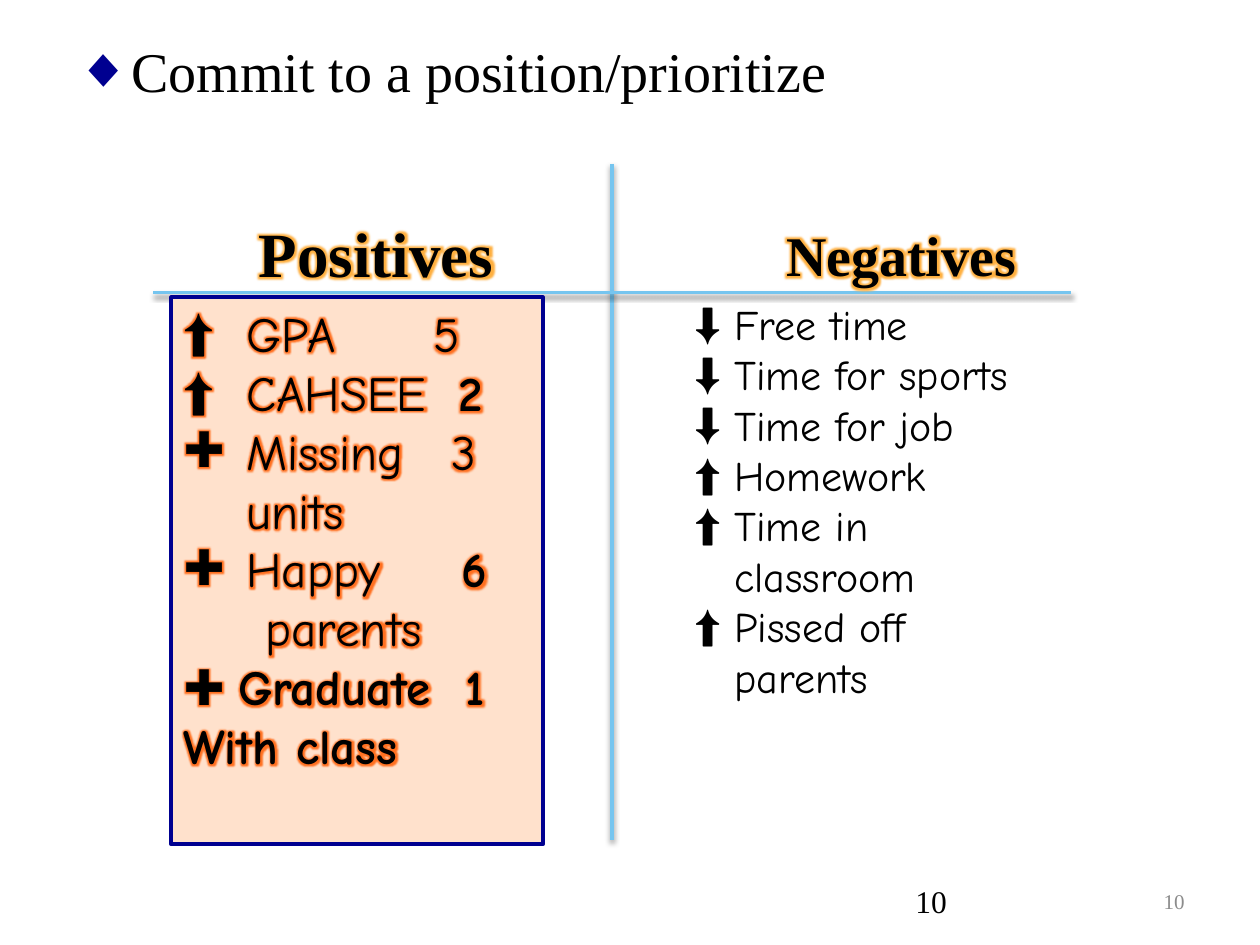
"""Build a slide that weighs ranked positives against negatives."""
from pptx import Presentation
from pptx import util as u
from pptx.dml.color import RGBColor
from pptx.enum import shapes, text
from pptx.oxml import ns, parse_xml

BLACK = RGBColor(0x00, 0x00, 0x00)
GREY = RGBColor(0x8C, 0x8C, 0x8C)
NAVY = RGBColor(0x00, 0x00, 0x90)
SKY = RGBColor(0x76, 0xC5, 0xEF)
PEACH = RGBColor(0xFF, 0xE1, 0xCC)
AMBER = RGBColor(0xFF, 0xB0, 0x40)
ORANGE = RGBColor(0xFF, 0x70, 0x20)
SERIF, COMIC = "Times New Roman", "Comic Neue"
A = ns.nsdecls("a")


def add_box(s, left, top, width, height):
    sp = s.shapes.add_textbox(u.Pt(left), u.Pt(top), u.Pt(width), u.Pt(height))
    sp.text_frame.word_wrap = True
    return sp.text_frame


def add_para(tf, runs, bullet=None, bullet_color=BLACK, left=0, hang=0, before=0, glow=None):
    p = tf.paragraphs[0] if not tf.paragraphs[0].runs else tf.add_paragraph()
    p.space_before = u.Pt(before)
    pPr = p._p.get_or_add_pPr()
    pPr.set("marL", str(u.Pt(left)))
    pPr.set("indent", str(u.Pt(-hang)))
    if bullet:
        pPr.append(parse_xml(f'<a:buClr {A}><a:srgbClr val="{bullet_color}"/></a:buClr>'))
        pPr.append(parse_xml(f'<a:buFont {A} typeface="Arial"/>'))
        pPr.append(parse_xml(f'<a:buChar {A} char="{bullet}"/>'))
    for words, fmt in runs:
        for i, line in enumerate(words.split("\v")):
            if i:
                p.add_line_break()
            r = p.add_run()
            r.text = line
            r.font.color.rgb = BLACK
            for name, value in fmt.items():
                setattr(r.font, name, value)
            if glow:
                fill = r._r.rPr.find(ns.qn("a:solidFill"))
                fill.addnext(parse_xml(
                    f'<a:effectLst {A}><a:glow rad="{u.Pt(6)}">'
                    f'<a:srgbClr val="{glow}"/></a:glow></a:effectLst>'))
    return p


prs = Presentation()
prs.slide_width, prs.slide_height = u.Pt(720), u.Pt(540)
s = prs.slides.add_slide(prs.slide_layouts[6])

title = {"name": SERIF, "size": u.Pt(32)}
tf = add_box(s, 36, 17.3, 648, 50)
add_para(tf, [("Commit to a position/prioritize", title)], "◆", NAVY, 27, 27, 6.4)

tf = add_box(s, 516, 500.5, 168, 28.8)
add_para(tf, [("10", {"name": SERIF, "size": u.Pt(18)})])
tf = add_box(s, 516, 500.5, 168, 28.8)
tf.vertical_anchor = text.MSO_ANCHOR.MIDDLE
p = add_para(tf, [("10", {"name": SERIF, "size": u.Pt(12)})])
p.runs[0].font.color.rgb = GREY
p.alignment = text.PP_ALIGN.RIGHT

for ends in [(349.7, 93.6, 349.7, 480), (87.6, 167.2, 612, 167.2)]:
    axis = s.shapes.add_connector(shapes.MSO_CONNECTOR.STRAIGHT, *map(u.Pt, ends))
    axis.line.color.rgb = SKY
    axis.line.width = u.Pt(2)
    axis._element.spPr.append(parse_xml(
        f'<a:effectLst {A}><a:outerShdw blurRad="{u.Pt(3.1)}" dist="{u.Pt(1.6)}" dir="5400000">'
        '<a:srgbClr val="000000"><a:alpha val="38000"/></a:srgbClr></a:outerShdw></a:effectLst>'))

head_width = 180
for word, size, center, top in [("Positives", 36, 215, 118.8), ("Negatives", 32, 515, 122.4)]:
    tf = add_box(s, center - head_width / 2, top, head_width, 47)
    p = add_para(tf, [(word, {"name": SERIF, "size": u.Pt(size), "bold": True})], glow=AMBER)
    p.alignment = text.PP_ALIGN.CENTER

sp = s.shapes.add_shape(shapes.MSO_SHAPE.RECTANGLE, u.Pt(97.8), u.Pt(170), u.Pt(212.4), u.Pt(312.5))
sp.shadow.inherit = False
sp.fill.solid()
sp.fill.fore_color.rgb = PEACH
sp.line.color.rgb = NAVY
sp.line.width = u.Pt(2.25)
tf = sp.text_frame
tf.word_wrap = True
tf.vertical_anchor = text.MSO_ANCHOR.TOP
plain = {"name": COMIC, "size": u.Pt(28)}
bold = {**plain, "bold": True}
positives = [
    ([("GPA", plain)], "⬆", 36, 36),
    ([("CAHSEE", plain)], "⬆", 36, 36),
    ([("Missing\vunits", plain)], "✚", 36, 36),
    ([("Happy", plain)], "✚", 36, 36),
    ([("parents", plain)], None, 47, 0),
    ([("✚ ", {**plain, "name": "Arial"}), ("Graduate", bold)], None, 0, 0),
    ([("With class", bold)], None, 0, 0),
]
for runs, bullet, left, hang in positives:
    p = add_para(tf, runs, bullet, left=left, hang=hang, glow=ORANGE)
    p.alignment = text.PP_ALIGN.LEFT

row = 33.5
tf = add_box(s, 240, 170, 64, 240)
tf.margin_left = tf.margin_right = 0
scores = [("5", plain, 8, 0), ("2", bold, 22, 0), ("3", plain, 18, 0),
          ("6", bold, 24, row), ("1", bold, 26, row)]
for score, fmt, left, before in scores:
    add_para(tf, [(score, fmt)], left=left, before=before, glow=ORANGE)

tf = add_box(s, 390, 167, 202.3, 305)
negatives = [("⬇", "Free time"), ("⬇", "Time for sports"), ("⬇", "Time for job"),
             ("⬆", "Homework"), ("⬆", "Time in classroom"), ("⬆", "Pissed off parents")]
for bullet, words in negatives:
    add_para(tf, [(words, {"name": COMIC, "size": u.Pt(24)})], bullet, left=22.5, hang=22.5)

prs.save("out.pptx")
